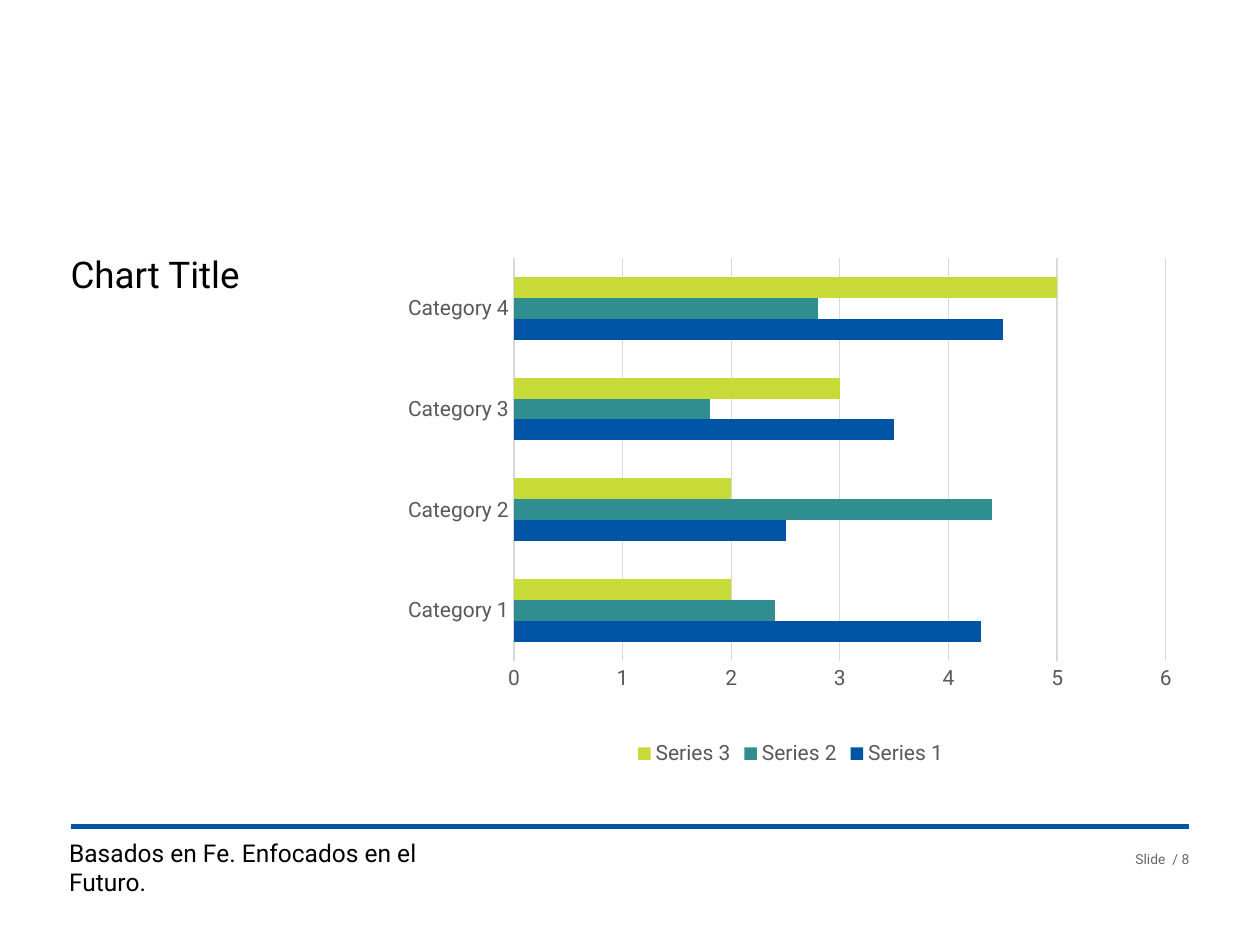
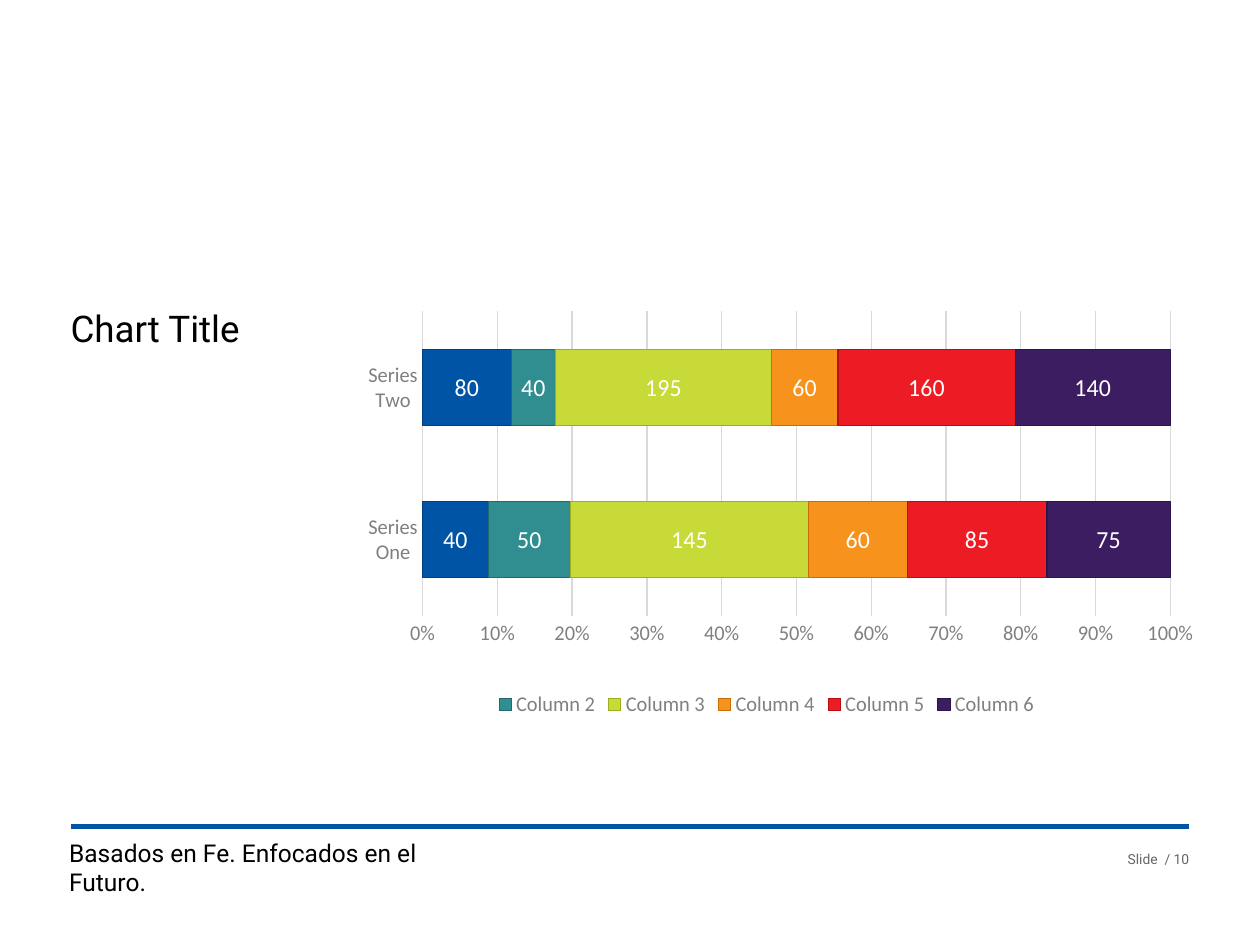
from lxml import etree
from pptx import Presentation
from pptx.chart.data import CategoryChartData
from pptx.dml.color import RGBColor
from pptx.enum import chart as charts, shapes, text
from pptx.oxml import parse_xml
from pptx.oxml.ns import nsdecls, qn
from pptx.util import Pt

BLUE = RGBColor(0x00, 0x54, 0xA6)
TEAL = RGBColor(0x30, 0x8E, 0x90)
LIME = RGBColor(0xC7, 0xDA, 0x37)
ORANGE = RGBColor(0xF7, 0x93, 0x1D)
RED = RGBColor(0xED, 0x1C, 0x24)
PURPLE = RGBColor(0x3C, 0x1D, 0x61)
OUTLINES = [
    RGBColor(0x00, 0x3F, 0x7D), RGBColor(0x24, 0x6A, 0x6C), RGBColor(0x9C, 0xAD, 0x20),
    RGBColor(0xC8, 0x6F, 0x07), RGBColor(0xB8, 0x0F, 0x15), RGBColor(0x2D, 0x16, 0x49),
]
FILLS = [BLUE, TEAL, LIME, ORANGE, RED, PURPLE]
BLACK = RGBColor(0x00, 0x00, 0x00)
WHITE = RGBColor(0xFF, 0xFF, 0xFF)
GRID = RGBColor(0xD9, 0xD9, 0xD9)
NUMBER_GRAY = RGBColor(0x66, 0x66, 0x66)
DARK_GRAY = RGBColor(0x59, 0x59, 0x59)
MID_GRAY = RGBColor(0x80, 0x80, 0x80)

MARGIN = 40.32
RIGHT_EDGE = 720 - MARGIN

PAGES = [
    dict(
        number=8, title_at=(MARGIN, 146.88, 154.8, 151.2),
        chart_type=charts.XL_CHART_TYPE.BAR_CLUSTERED, chart_at=(224.64, 146.88, 454.32, 293.76),
        plot=(0.152, 0, 0.82, 0.786), gap=182, overlap=0,
        font="Roboto", color=DARK_GRAY, axis_format="General", stacked=False,
        categories=["Category 1", "Category 2", "Category 3", "Category 4"],
        series={
            "Series 1": (4.3, 2.5, 3.5, 4.5),
            "Series 2": (2.4, 4.4, 1.8, 2.8),
            "Series 3": (2, 2, 3, 5),
        },
    ),
    dict(
        number=10, title_at=(MARGIN, 177.84, 131.76, 113.76),
        chart_type=charts.XL_CHART_TYPE.BAR_STACKED_100, chart_at=(207.36, 156.24, 474.48, 256.32),
        plot=(0.104, 0.085, 0.926, 0.678), gap=100, overlap=100,
        font="Calibri", color=MID_GRAY, axis_format="0%", stacked=True,
        categories=["Series One", "Series Two"],
        series={
            "Column 1": (40, 80),
            "Column 2": (50, 40),
            "Column 3": (145, 195),
            "Column 4": (60, 60),
            "Column 5": (85, 160),
            "Column 6": (75, 140),
        },
    ),
]


def set_font(font, name, size, color):
    font.name, font.size = name, Pt(size)
    font.color.rgb = color


def write(box, words, size, color, insets, align=text.PP_ALIGN.LEFT):
    frame = box.text_frame
    frame.text = words
    frame.word_wrap = True
    frame.auto_size = text.MSO_AUTO_SIZE.NONE
    frame.vertical_anchor = text.MSO_ANCHOR.TOP
    (frame.margin_left, frame.margin_top,
     frame.margin_right, frame.margin_bottom) = map(Pt, insets)
    para = frame.paragraphs[0]
    para.alignment = align
    set_font(para.runs[0].font, "Roboto", size, color)
    return para


deck = Presentation()
deck.slide_width, deck.slide_height = Pt(720), Pt(540)

for page in PAGES:
    slide = deck.slides.add_slide(deck.slide_layouts[5])

    # Footer
    rule = slide.shapes.add_connector(
        shapes.MSO_CONNECTOR.STRAIGHT, Pt(MARGIN), Pt(472.32), Pt(RIGHT_EDGE), Pt(472.32))
    rule.line.color.rgb = BLUE
    rule.line.width = Pt(3)
    etree.SubElement(rule.element.spPr, qn("a:effectLst"))
    number = slide.shapes.add_textbox(Pt(605.52), Pt(486), Pt(74.16), Pt(9.36))
    write(number, f"Slide  / {page['number']}", 7.9, NUMBER_GRAY, (0, 0, 0, 0), text.PP_ALIGN.RIGHT)
    motto = slide.shapes.add_textbox(Pt(32.4), Pt(475.2), Pt(257.76), Pt(24.48))
    write(motto, "Basados en Fe. Enfocados en el Futuro.", 14, BLACK, (7.2, 3.6, 7.2, 3.6))

    # Title
    title = slide.shapes.title
    title.left, title.top, title.width, title.height = map(Pt, page["title_at"])
    write(title, "Chart Title", 21, BLACK, (0, 0, 7.2, 3.6)).line_spacing = 0.9

    # Chart
    data = CategoryChartData()
    data.categories = page["categories"]
    for name, values in page["series"].items():
        data.add_series(name, values)
    chart = slide.shapes.add_chart(page["chart_type"], *map(Pt, page["chart_at"]), data).chart
    chart.has_title = False
    set_font(chart.font, "Calibri", 10, BLACK)

    chart.has_legend = True
    legend = chart.legend
    legend.position = charts.XL_LEGEND_POSITION.BOTTOM
    legend.include_in_layout = False
    set_font(legend.font, page["font"], 12, page["color"])

    for axis in (chart.category_axis, chart.value_axis):
        axis.major_tick_mark = axis.minor_tick_mark = charts.XL_TICK_MARK.NONE
        set_font(axis.tick_labels.font, page["font"], 12, page["color"])
    chart.value_axis.tick_labels.number_format = page["axis_format"]
    chart.value_axis.tick_labels.number_format_is_linked = False
    chart.value_axis.format.line.fill.background()
    chart.value_axis.has_major_gridlines = True
    for line in (chart.category_axis.format.line, chart.value_axis.major_gridlines.format.line):
        line.color.rgb = GRID
        line.width = Pt(0.75)

    plot = chart.plots[0]
    plot.vary_by_categories = False
    plot.gap_width, plot.overlap = page["gap"], page["overlap"]
    for series, fill, outline in zip(plot.series, FILLS, OUTLINES):
        series.format.fill.solid()
        series.format.fill.fore_color.rgb = fill
        if page["stacked"]:
            series.format.line.color.rgb = outline
            series.format.line.width = Pt(0.75)
            labels = series.data_labels
            labels.show_value = True
            set_font(labels.font, "Calibri", 14, WHITE)

    # Fixed inner plot area
    area = chart.element.find(".//" + qn("c:plotArea"))
    for layout in area.findall(qn("c:layout")):
        area.remove(layout)
    sizes = "".join(f'<c:{key} val="{value}"/>' for key, value in zip("xywh", page["plot"]))
    area.insert(0, parse_xml(
        f'<c:layout {nsdecls("c")}><c:manualLayout><c:layoutTarget val="inner"/>'
        f'<c:xMode val="edge"/><c:yMode val="edge"/>{sizes}</c:manualLayout></c:layout>'))

    # The last stacked column has no legend entry
    if page["stacked"]:
        legend_xml = chart.element.find(".//" + qn("c:legend"))
        legend_xml.find(qn("c:legendPos")).addnext(parse_xml(
            f'<c:legendEntry {nsdecls("c")}><c:idx val="{len(page["series"]) - 1}"/>'
            '<c:delete val="1"/></c:legendEntry>'))

deck.save("out.pptx")
